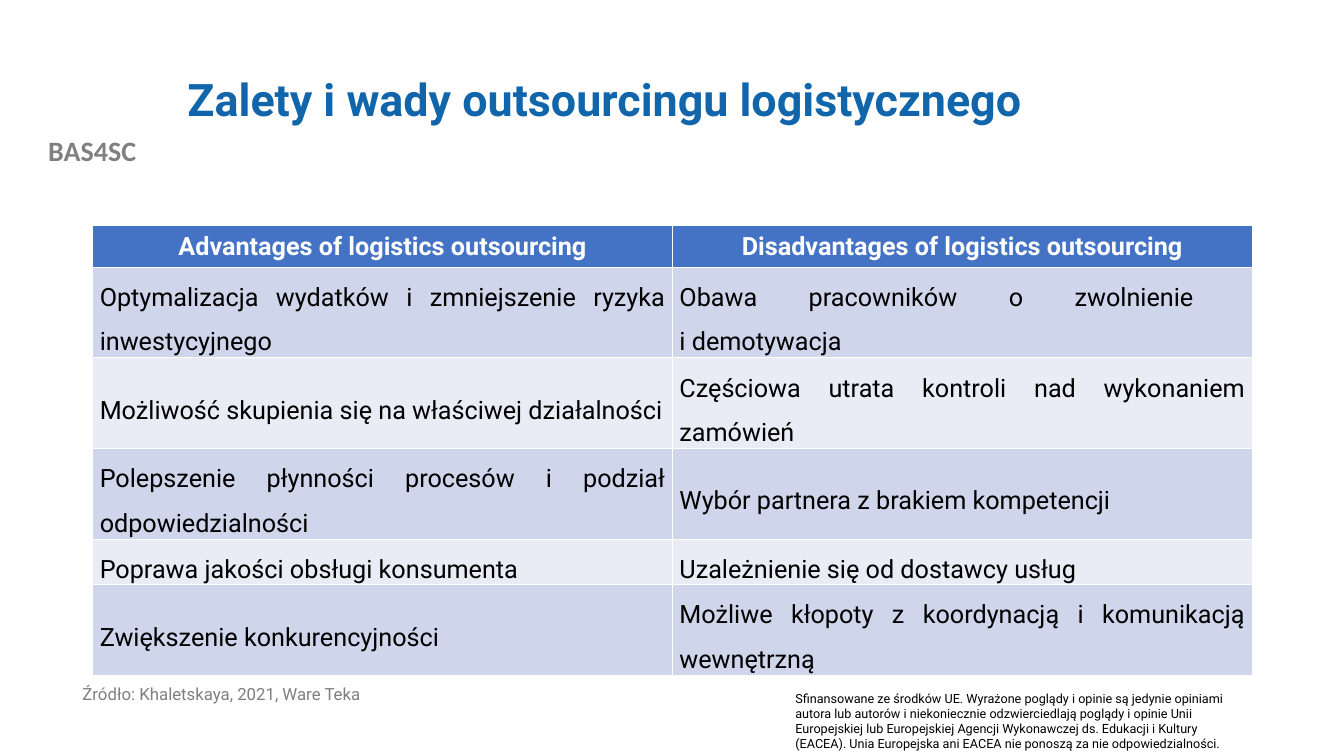
from pptx import Presentation
from pptx.dml.color import RGBColor as RGB
from pptx.enum.text import MSO_ANCHOR as Anchor, MSO_AUTO_SIZE as Fit, PP_ALIGN as Align
from pptx.util import Inches, Pt

BLUE = RGB(0x10, 0x65, 0xAB)
HEAD = RGB(0x44, 0x72, 0xC4)
DARK = RGB(0xCF, 0xD5, 0xEA)
LIGHT = RGB(0xE9, 0xEB, 0xF5)
GRAY = RGB(0x80, 0x80, 0x80)
SLATE = RGB(0x7F, 0x7F, 0x7F)
WHITE = RGB(0xFF, 0xFF, 0xFF)
BLACK = RGB(0, 0, 0)

ROWS = [
    ("Advantages of logistics outsourcing", "Disadvantages of logistics outsourcing"),
    ("Optymalizacja wydatków i zmniejszenie ryzyka inwestycyjnego",
     "Obawa pracowników o zwolnienie \ni demotywacja"),
    ("Możliwość skupienia się na właściwej działalności",
     "Częściowa utrata kontroli nad wykonaniem zamówień"),
    ("Polepszenie płynności procesów i podział odpowiedzialności",
     "Wybór partnera z brakiem kompetencji"),
    ("Poprawa jakości obsługi konsumenta", "Uzależnienie się od dostawcy usług"),
    ("Zwiększenie konkurencyjności",
     "Możliwe kłopoty z koordynacją i komunikacją wewnętrzną"),
]
FUNDING = (
    "Sfinansowane ze środków UE. Wyrażone poglądy i opinie są jedynie opiniami "
    "autora lub autorów i niekoniecznie odzwierciedlają poglądy i opinie Unii "
    "Europejskiej lub Europejskiej Agencji Wykonawczej ds. Edukacji i Kultury "
    "(EACEA). Unia Europejska ani EACEA nie ponoszą za nie odpowiedzialności."
)


class Deck:
    def __init__(self, font):
        self.font = font
        self.prs = Presentation()
        self.prs.slide_width = Inches(13.33)
        self.prs.slide_height = Inches(7.5)
        self.slide = self.prs.slides.add_slide(self.prs.slide_layouts[5])

    def area(self, left, top, width, height):
        wide, high = self.prs.slide_width / 100, self.prs.slide_height / 100
        return [int(n) for n in (left * wide, top * high, width * wide, height * high)]

    def put(self, frame, text, size, color, bold=False, align=Align.LEFT, line=1.0, font=None):
        par = frame.paragraphs[0]
        par.alignment = align
        par.line_spacing = line
        par.space_before = Pt(0)
        for i, part in enumerate(text.split("\n")):
            if i:
                par.add_line_break()
            run = par.add_run()
            run.text = part
            run.font.name = font or self.font
            run.font.size = Pt(size)
            run.font.bold = bold
            run.font.color.rgb = color
        return par

    def title(self, area, text):
        shape = self.slide.shapes.title
        shape.left, shape.top, shape.width, shape.height = self.area(*area)
        frame = shape.text_frame
        frame.auto_size = Fit.NONE
        frame.vertical_anchor = Anchor.MIDDLE
        self.put(frame, text, 32, BLUE, bold=True, line=0.9)

    def text(self, area, text, size, color, **style):
        frame = self.slide.shapes.add_textbox(*self.area(*area)).text_frame
        frame.word_wrap = True
        self.put(frame, text, size, color, **style)

    def table(self, area, rows):
        grid = self.slide.shapes.add_table(len(rows), len(rows[0]), *self.area(*area)).table
        for r, row in enumerate(rows):
            for c, text in enumerate(row):
                self.cell(grid.cell(r, c), text, r)

    def cell(self, cell, text, row):
        cell.vertical_anchor = Anchor.MIDDLE
        cell.fill.solid()
        if row == 0:
            cell.fill.fore_color.rgb = HEAD
            self.put(cell.text_frame, text, 18, WHITE, bold=True, align=Align.CENTER)
            return
        cell.fill.fore_color.rgb = DARK if row % 2 else LIGHT
        cell.margin_left = cell.margin_right = Inches(0.07)
        cell.margin_top = cell.margin_bottom = 0
        par = self.put(cell.text_frame, text, 18, BLACK, align=Align.JUSTIFY, line=1.5)
        par.space_after = Pt(6)


def main():
    deck = Deck("Roboto")
    deck.text((0, 17.07, 13.73, 5.87), "BAS4SC", 20, GRAY,
              bold=True, align=Align.CENTER, font="Calibri")
    deck.text((58.44, 90.67, 34.73, 9.47), FUNDING, 9, BLACK)
    deck.title((13.2, 5.33, 79.97, 16.27), "Zalety i wady outsourcingu logistycznego")
    deck.text((5.4, 90.13, 37.58, 6.93), "Źródło: Khaletskaya, 2021, Ware Teka", 12, SLATE, line=0.9)
    deck.table((6.9, 29.87, 86.27, 32.8), ROWS)
    deck.prs.save("out.pptx")


if __name__ == "__main__":
    main()
